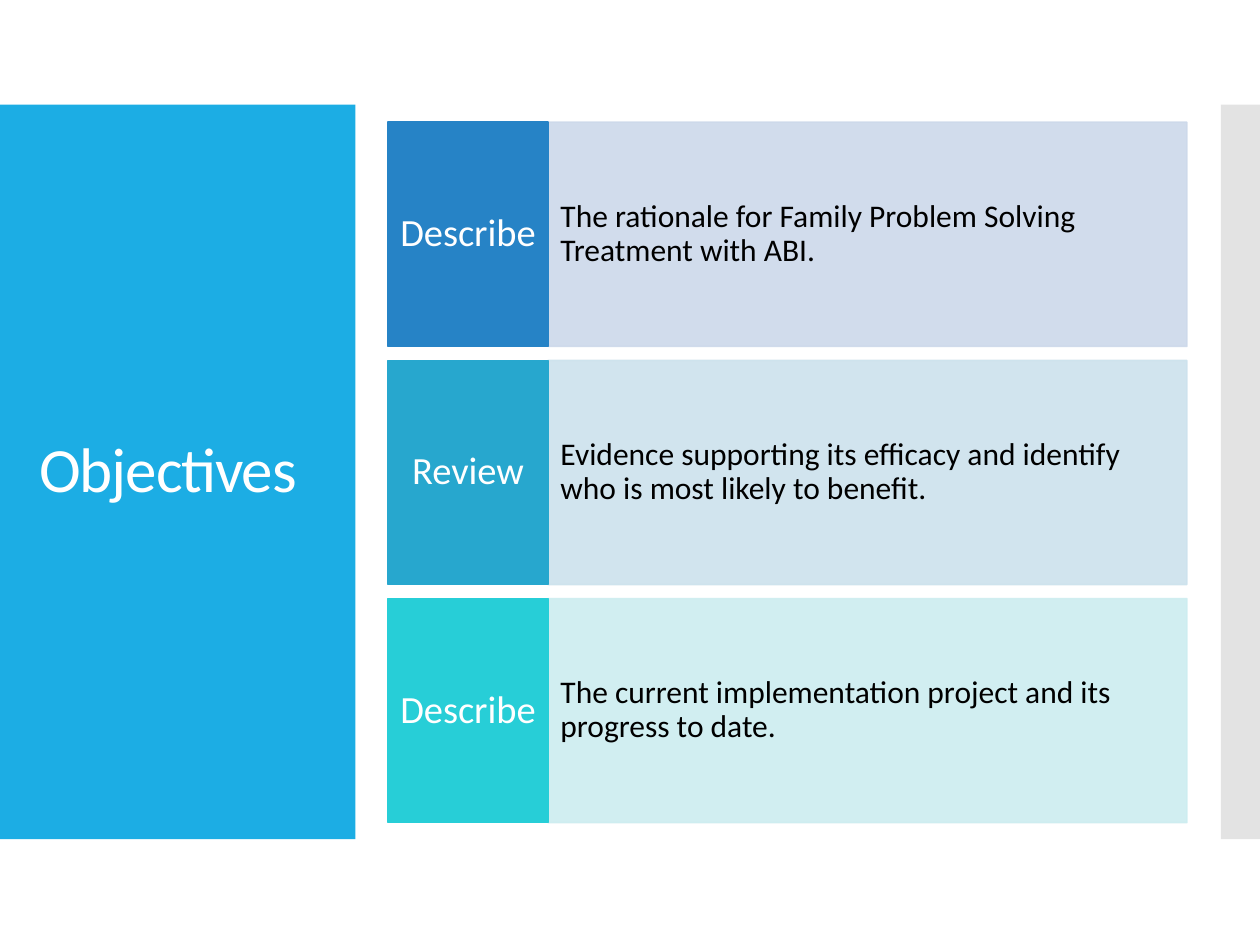
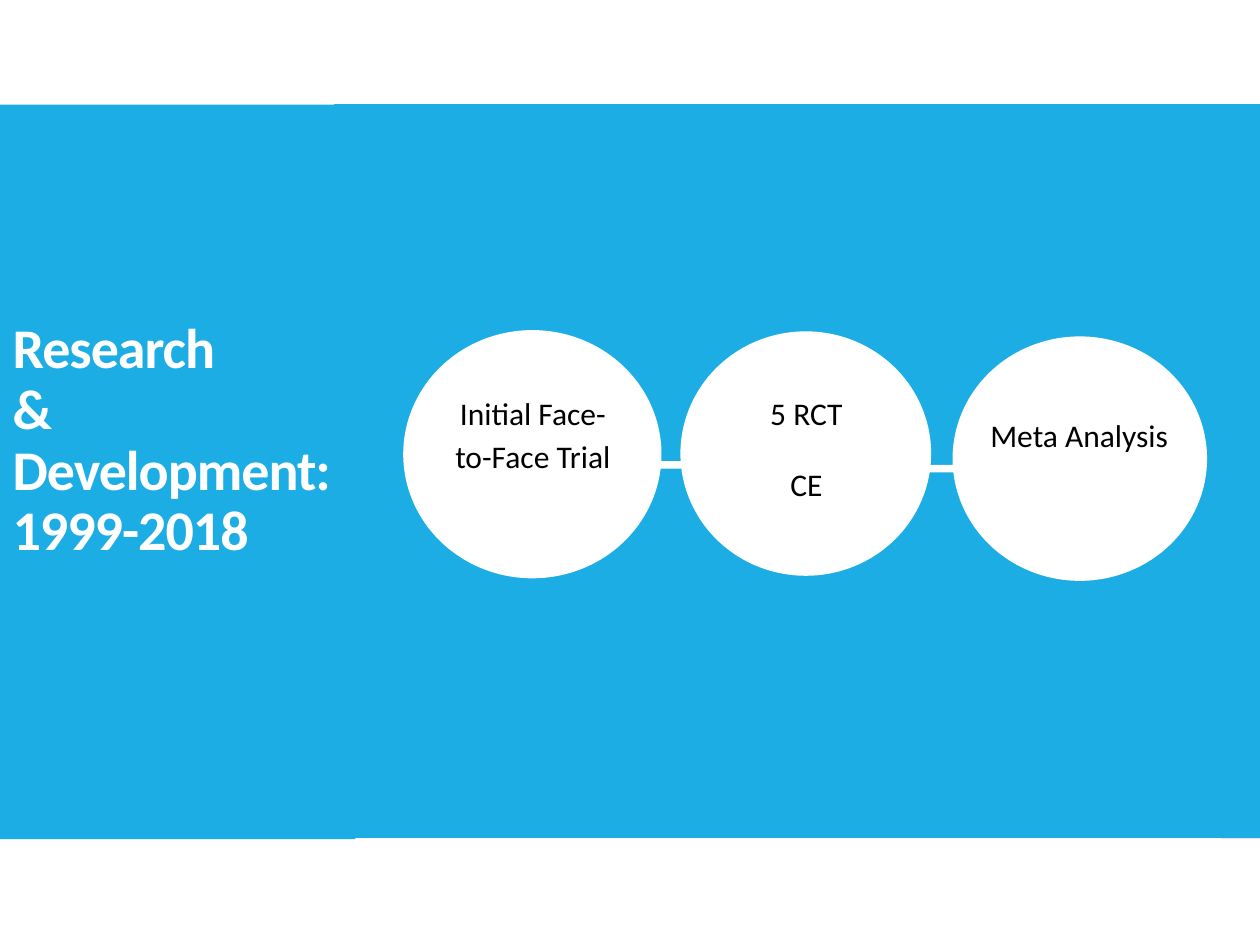
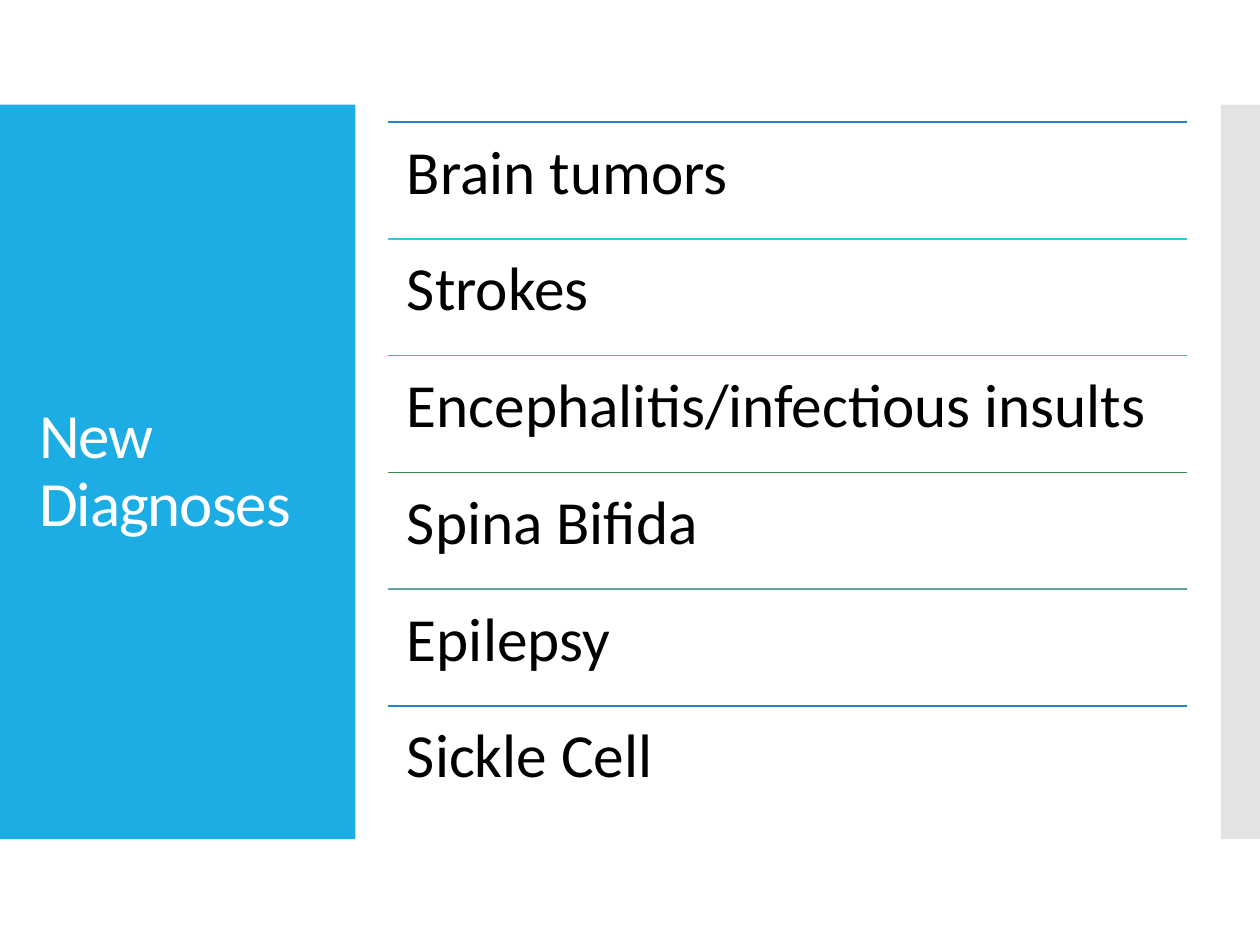
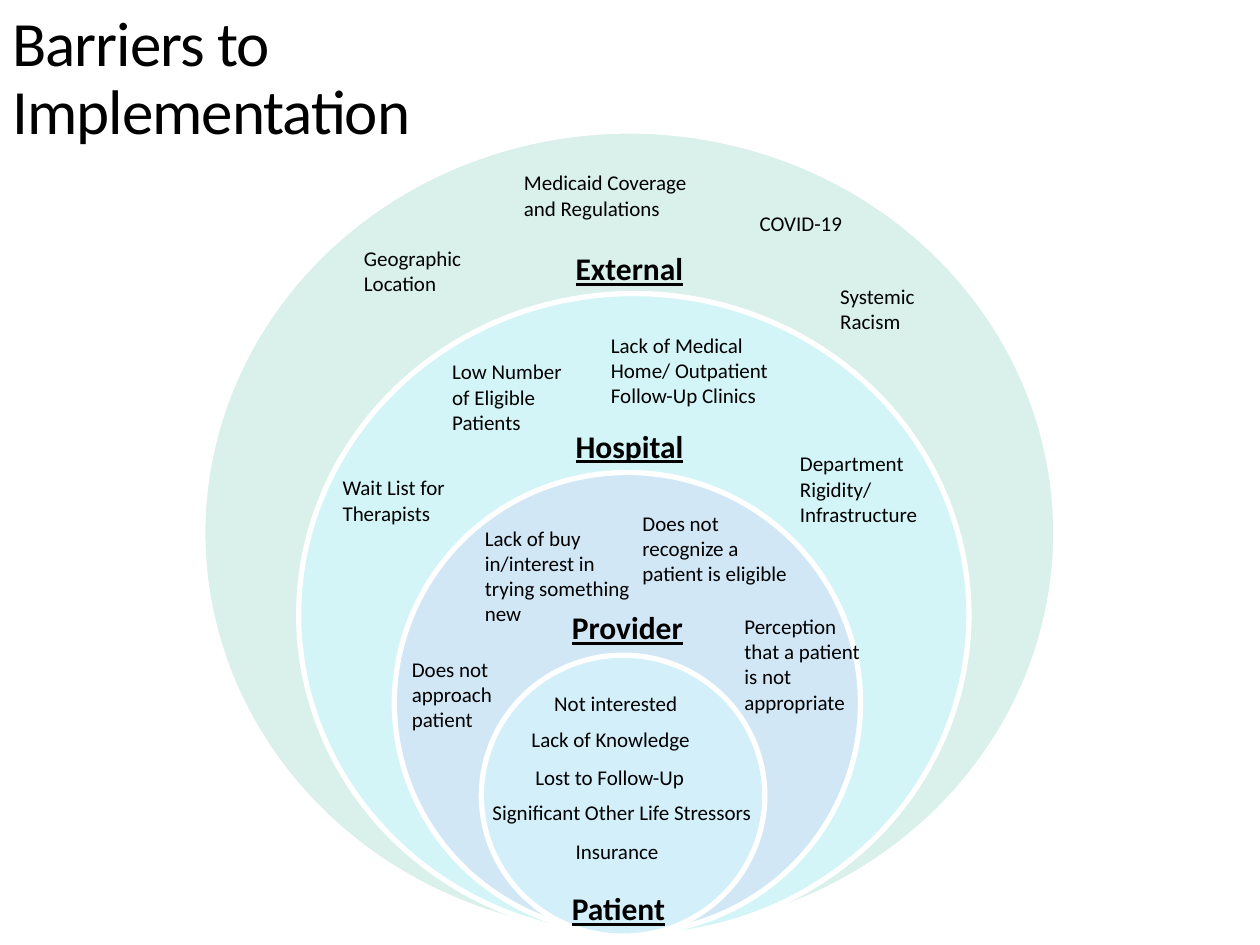
from lxml import etree
from pptx import Presentation
from pptx import util as u
from pptx.dml.color import RGBColor
from pptx.enum import shapes, text
from pptx.oxml.ns import qn

FONT = "Calibri"
BLUE = "1CADE4"
GREY = "C8C8C8"
WHITE = "FFFFFF"
BLACK = "000000"
TITLE_BOX = (0.21, 1.23, 2.42, 5.03)
CONTENT_LEFT, CONTENT_TOP, CONTENT_RIGHT = 3.08, 0.97, 9.42

OBJECTIVES = [
    ("Describe", "The rationale for Family Problem Solving Treatment with ABI.", "2683C6", "CDD9EA"),
    ("Review", "Evidence supporting its efficacy and identify who is most likely to benefit.", "27A7CE", "CDE2ED"),
    ("Describe", "The current implementation project and its progress to date.", "27CED7", "CDEDF0"),
]
LINKS = [(4.85, 3.66, 0.71, 0.06), (7.08, 3.69, 0.71, 0.06)]
STAGES = [
    ((3.2, 2.62, 2.05, 1.97), (3.48, 2.98, 1.5, 1.06), ["Initial Face-to-Face Trial"]),
    ((5.4, 2.63, 1.99, 1.94), (5.67, 2.98, 1.46, 1.05), ["5 RCT", "CE"]),
    ((7.56, 2.67, 2.02, 1.94), (7.69, 3.16, 1.75, 0.79), ["Meta Analysis"]),
]
DIAGNOSES = [
    ("Brain tumors", "2683C6"),
    ("Strokes", "27CED7"),
    ("Encephalitis/infectious insults", "42BA97"),
    ("Spina Bifida", "3E8853"),
    ("Epilepsy", "62A39F"),
    ("Sickle Cell", "2683C6"),
]
LEVELS = [
    ((1.61, 1.04, 6.77, 6.38), "D9F1EA"),
    ((2.37, 2.33, 5.32, 5.1), "D4F5F7"),
    ((3.13, 3.75, 3.7, 3.66), "D1E7F6"),
    ((3.82, 5.2, 2.25, 2.23), "D2EFFA"),
]
LEVEL_NAMES = [
    ("Patient", (4.44, 7.01, 1.14, 0.4), True),
    ("Provider", (4.44, 4.78, 1.13, 0.4), False),
    ("Hospital", (4.47, 3.34, 1.12, 0.4), False),
    ("External", (4.47, 1.93, 1.12, 0.4), False),
]
BARRIERS = [
    ("Not interested", (4.3, 5.43, 1.31, 0.3), True),
    ("Lack of Knowledge", (4.12, 5.72, 1.63, 0.3), True),
    ("Lost to Follow-Up", (4.15, 6.02, 1.44, 0.3), False),
    ("Significant Other Life Stressors", (3.81, 6.3, 2.35, 0.3), False),
    ("Insurance", (4.47, 6.61, 0.92, 0.3), True),
    ("Does not approach patient", (3.17, 5.16, 0.92, 0.71), True),
    ("Lack of buy in/interest in trying something new", (3.75, 4.12, 1.39, 0.91), True),
    ("Does not recognize a patient is eligible", (5, 4, 1.39, 0.71), True),
    ("Perception that a patient is not appropriate", (5.81, 4.82, 1.13, 0.91), True),
    ("Wait List for Therapists", (2.62, 3.72, 1.05, 0.5), True),
    ("Low Number of Eligible Patients", (3.49, 2.8, 1.15, 0.71), True),
    ("Lack of Medical Home/ Outpatient Follow-Up Clinics", (4.75, 2.59, 1.52, 0.71), True),
    ("Department Rigidity/ Infrastructure", (6.25, 3.53, 1.29, 0.71), True),
    ("Medicaid Coverage and Regulations", (4.06, 1.3, 1.62, 0.5), True),
    ("Geographic Location", (2.79, 1.9, 1.1, 0.5), True),
    ("Systemic Racism", (6.57, 2.2, 0.92, 0.5), True),
    ("COVID-19", (5.93, 1.62, 0.92, 0.3), True),
]


def rgb(value):
    return RGBColor.from_string(value)


def inches(box):
    return [u.Inches(length) for length in box]


def set_insets(frame, horizontal, vertical):
    frame.margin_left = frame.margin_right = u.Inches(horizontal)
    frame.margin_top = frame.margin_bottom = u.Inches(vertical)


def add_run(paragraph, words, size, color=BLACK, bold=False, underline=False):
    run = paragraph.add_run()
    run.text = words
    font = run.font
    font.name, font.size, font.color.rgb = FONT, u.Pt(size), rgb(color)
    font.bold, font.underline = bold, underline
    return run


def write(frame, lines, size, color=BLACK, align=text.PP_ALIGN.LEFT,
          anchor=text.MSO_ANCHOR.TOP, spacing=None, after=None, wrap=True, **style):
    frame.word_wrap = wrap
    frame.vertical_anchor = anchor
    for index, line in enumerate(lines):
        paragraph = frame.add_paragraph() if index else frame.paragraphs[0]
        paragraph.alignment = align
        if spacing:
            paragraph.line_spacing = spacing
        if after:
            paragraph.space_after = u.Pt(after)
        add_run(paragraph, line, size, color, **style)


def add_shape(slide, kind, box, fill, line=None, width=0.85, opacity=100):
    shape = slide.shapes.add_shape(kind, *inches(box))
    shape.shadow.inherit = False
    shape.fill.solid()
    shape.fill.fore_color.rgb = rgb(fill)
    if line:
        shape.line.color.rgb = rgb(line)
        shape.line.width = u.Pt(width)
    else:
        shape.line.fill.background()
    if opacity < 100:
        for color in shape.element.spPr.iter(qn("a:srgbClr")):
            etree.SubElement(color, qn("a:alpha")).set("val", str(opacity * 1000))
    return shape


def add_rectangle(slide, box, fill, **options):
    return add_shape(slide, shapes.MSO_SHAPE.RECTANGLE, box, fill, **options)


def add_ellipse(slide, box, fill, **options):
    return add_shape(slide, shapes.MSO_SHAPE.OVAL, box, fill, **options)


def add_rule(slide, left, right, top, color):
    rule = slide.shapes.add_connector(
        shapes.MSO_CONNECTOR.STRAIGHT, *inches((left, top, right, top)))
    rule.line.color.rgb = rgb(color)
    rule.line.width = u.Pt(0.85)
    etree.SubElement(rule.element.spPr, qn("a:effectLst"))


def add_label(slide, words, box, size, wrap, **style):
    label = slide.shapes.add_textbox(*inches(box))
    write(label.text_frame, [words], size, wrap=wrap, **style)
    label.text_frame.auto_size = text.MSO_AUTO_SIZE.SHAPE_TO_FIT_TEXT


def add_title(slide, lines, box=TITLE_BOX, size=36, color=WHITE, bold=False, bottom=0.05):
    title = slide.shapes.title
    title.left, title.top, title.width, title.height = inches(box)
    frame = title.text_frame
    frame.word_wrap = True
    frame.auto_size = text.MSO_AUTO_SIZE.NONE
    frame.vertical_anchor = text.MSO_ANCHOR.MIDDLE
    set_insets(frame, 0.1, 0.05)
    frame.margin_bottom = u.Inches(bottom)
    paragraph = frame.paragraphs[0]
    paragraph.alignment = text.PP_ALIGN.LEFT
    paragraph.line_spacing = 0.9
    for index, line in enumerate(lines):
        if index:
            paragraph.add_line_break()
        run = add_run(paragraph, line, size, color, bold)
        run.font._element.set("spc", "-60")
    slide.shapes.element.append(title.element)


def add_layout_bands(layout, slide):
    bands = [
        add_rectangle(slide, (0, 0.83, 2.82, 5.83), BLUE),
        add_rectangle(slide, (9.69, 0.83, 0.32, 5.83), GREY, opacity=50),
    ]
    for position, band in enumerate(bands, 2):
        layout.shapes.element.insert(position, band.element)


def build_objectives(slide):
    height, pitch, divider = 1.78, 1.89, 4.35
    for row, (verb, goal, dark, pale) in enumerate(OBJECTIVES):
        top = CONTENT_TOP + row * pitch
        panel = add_rectangle(slide, (divider, top, CONTENT_RIGHT - divider, height), pale,
                              line=pale, opacity=90)
        set_insets(panel.text_frame, 0.1, 0.45)
        write(panel.text_frame, [goal], 18, anchor=text.MSO_ANCHOR.MIDDLE, spacing=0.9)
        tab = add_rectangle(slide, (CONTENT_LEFT, top, divider - CONTENT_LEFT, height), dark,
                            line=dark)
        set_insets(tab.text_frame, 0.07, 0.18)
        write(tab.text_frame, [verb], 22, WHITE, text.PP_ALIGN.CENTER,
              text.MSO_ANCHOR.MIDDLE, 0.9)
    add_title(slide, ["Objectives"])


def build_research(slide):
    add_rectangle(slide, (2.66, 0.83, 7.34, 5.82), BLUE, line=BLUE, width=0.75)
    for box in LINKS:
        link = add_shape(slide, shapes.MSO_SHAPE.ROUNDED_RECTANGLE, box, WHITE)
        link.adjustments[0] = 0.5
    for circle_box, text_box, lines in STAGES:
        add_ellipse(slide, circle_box, WHITE)
        caption = add_rectangle(slide, text_box, WHITE)
        set_insets(caption.text_frame, 0.1, 0.1)
        write(caption.text_frame, lines, 18, align=text.PP_ALIGN.CENTER, spacing=1.15, after=16)
    add_title(slide, ["Research", "&", "Development:", "1999-2018"],
              (0, 1.23, 2.91, 5.03), size=32, bold=True, bottom=0.53)


def build_diagnoses(slide):
    height = 5.56 / len(DIAGNOSES)
    for row, (diagnosis, color) in enumerate(DIAGNOSES):
        top = CONTENT_TOP + row * height
        add_rule(slide, CONTENT_LEFT, CONTENT_RIGHT, top, color)
        entry = slide.shapes.add_textbox(
            *inches((CONTENT_LEFT, top, CONTENT_RIGHT - CONTENT_LEFT, height)))
        set_insets(entry.text_frame, 0.15, 0.15)
        write(entry.text_frame, [diagnosis], 35, spacing=0.9)
    add_title(slide, ["New Diagnoses"])


def build_barriers(slide):
    add_rectangle(slide, (0, 0, 10, 7.5), WHITE)
    for box, fill in LEVELS:
        add_ellipse(slide, box, fill, line=WHITE, width=3)
    for name, box, wrap in LEVEL_NAMES:
        add_label(slide, name, box, 18, wrap, bold=True, underline=True)
    for barrier, box, wrap in BARRIERS:
        add_label(slide, barrier, box, 12, wrap)
    add_title(slide, ["Barriers to Implementation"], (0, 0.04, 5.2, 1.19), color=BLACK)


def main():
    presentation = Presentation()
    presentation.slide_width, presentation.slide_height = inches((10, 7.5))
    layout = presentation.slide_layouts.get_by_name("Title Only")
    builders = [build_objectives, build_research, build_diagnoses, build_barriers]
    for number, build in enumerate(builders):
        slide = presentation.slides.add_slide(layout)
        if number == 0:
            add_layout_bands(layout, slide)
        build(slide)
    presentation.save("out.pptx")


if __name__ == "__main__":
    main()
